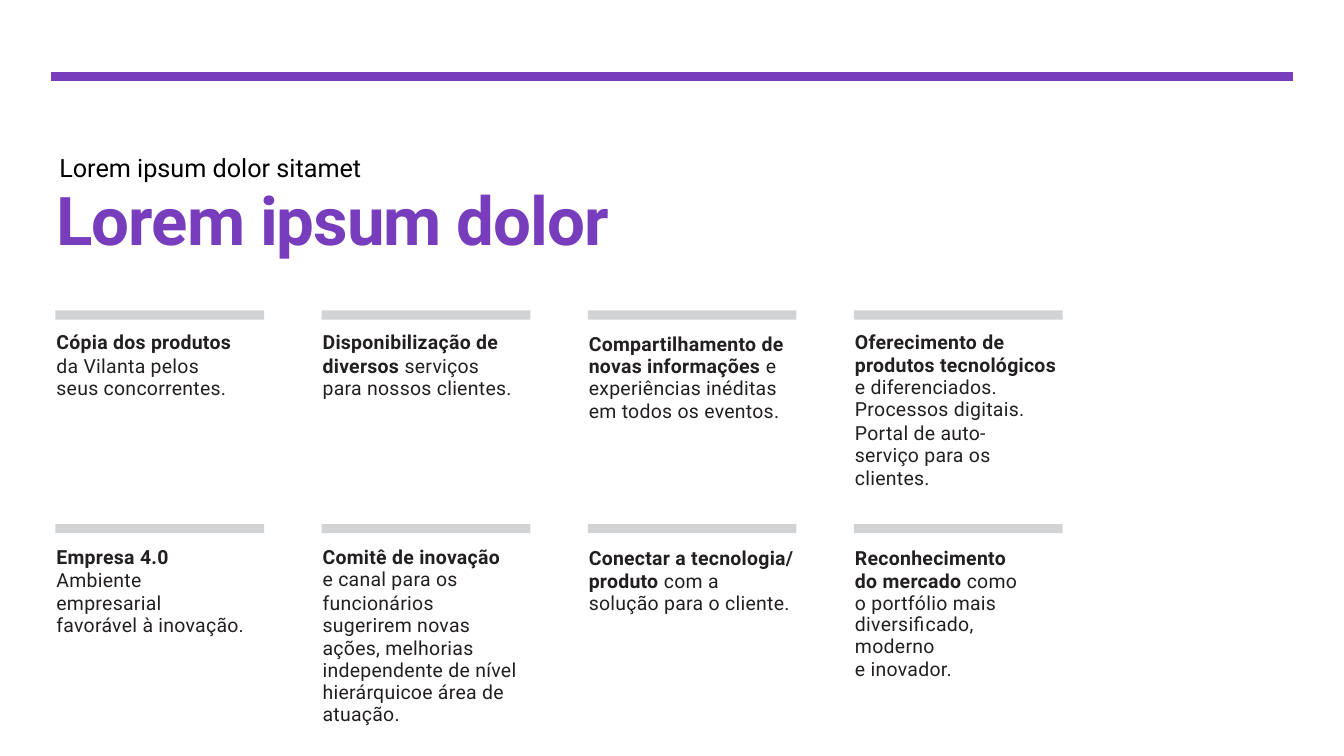
from dataclasses import dataclass

from lxml.etree import SubElement
from pptx import Presentation
from pptx.dml.color import RGBColor
from pptx.enum.shapes import MSO_CONNECTOR, MSO_SHAPE
from pptx.enum.text import MSO_ANCHOR, MSO_AUTO_SIZE
from pptx.oxml.ns import qn
from pptx.util import Inches, Pt

PURPLE, GRAY, INK, BLACK = "773DBD", "D1D3D4", "231F20", "000000"
FONT = "Roboto"
COLUMN_LEFT, COLUMN_STEP = 0.55, 2.64
BAR_TOPS = (3.08, 5.2)
BAR_WIDTH, BAR_HEIGHT = 2.07, 0.09
TEXT_OFFSETS = (0.18, 0.19)


@dataclass
class Para:
    bold: str = ""
    plain: str = ""
    line: float | None = 16
    before: float = 0
    right: float = 0
    size: float = 13.9
    color: str = INK
    tracking: float = 0.2


@dataclass
class Card:
    width: float
    height: float
    paras: list[Para]
    top_inset: float = 0.02


# Cards by row, left to right
CARDS = [
    [
        Card(1.94, 0.7, [
            Para("Cópia dos produtos", line=16.4),
            Para(plain="da Vilanta pelos seus concorrentes.", before=0.8, right=0.1)]),
        Card(1.97, 0.7, [
            Para("Disponibilização de", line=16.4),
            Para("diversos ", "serviços para nossos clientes.", before=0.8, right=0.03)]),
        Card(1.99, 0.92, [
            Para("Compartilhamento de novas informações ",
                 "e experiências inéditas em todos os eventos.")], 0.04),
        Card(2.03, 1.37, [
            Para("Oferecimento de", line=16.4),
            Para("produtos tecnológicos"),
            Para(plain="e diferenciados."),
            Para(plain="Processos digitais."),
            Para(plain="Portal de auto-serviço para os clientes.", before=0.8, right=0.3)]),
    ],
    [
        Card(1.94, 0.7, [
            Para("Empresa 4.0", line=16.4),
            Para(plain="Ambiente empresarial favorável à inovação.", before=0.8, right=0.03)]),
        Card(2.04, 1.59, [
            Para("Comitê de inovação", line=16.4),
            Para(plain="e canal para os"),
            Para(plain="funcionários sugerirem novas ações, melhorias independente "
                       "de nível hierárquicoe área de", before=0.8, right=0.05),
            Para(plain="atuação.", line=15.6)]),
        Card(2.07, 0.7, [
            Para("Conectar a tecnologia/ produto ", "com a\nsolução para o cliente.")], 0.04),
        Card(2.02, 1.13, [
            Para("Reconhecimento do mercado ", "como o portfólio mais", right=0.3),
            Para(plain="diversificado, moderno", line=15.2, right=0.3),
            Para(plain="e inovador.", line=16.4)], 0.04),
    ],
]


def rgb(color: str) -> RGBColor:
    return RGBColor.from_string(color)


def add_spans(para, text: str, bold: bool, tracking: float) -> None:
    for index, line in enumerate(text.split("\n")):
        if index:
            para.add_line_break()
        span = para.add_run()
        span.text = line
        span.font.bold = bold
        span._r.get_or_add_rPr().set("spc", str(round(tracking * 100)))


def add_text(page, left: float, top: float, width: float, height: float,
             paras: list[Para], insets: tuple[float, float, float, float],
             anchor=MSO_ANCHOR.TOP) -> None:
    box = page.shapes.add_textbox(Inches(left), Inches(top), Inches(width), Inches(height))
    frame = box.text_frame
    frame.word_wrap = True
    frame.auto_size = MSO_AUTO_SIZE.SHAPE_TO_FIT_TEXT
    frame.vertical_anchor = anchor
    (frame.margin_left, frame.margin_top,
     frame.margin_right, frame.margin_bottom) = map(Inches, insets)
    for index, item in enumerate(paras):
        para = frame.add_paragraph() if index else frame.paragraphs[0]
        if item.line:
            para.line_spacing = Pt(item.line)
        if item.before:
            para.space_before = Pt(item.before)
        if item.right:
            para._p.get_or_add_pPr().set("marR", str(Inches(item.right)))
        para.font.name = FONT
        para.font.size = Pt(item.size)
        para.font.color.rgb = rgb(item.color)
        for text, bold in ((item.bold, True), (item.plain, False)):
            if text:
                add_spans(para, text, bold, item.tracking)


def add_bar(page, left: float, top: float) -> None:
    bar = page.shapes.add_shape(MSO_SHAPE.RECTANGLE, Inches(left), Inches(top),
                                Inches(BAR_WIDTH), Inches(BAR_HEIGHT))
    bar.shadow.inherit = False
    bar.fill.solid()
    bar.fill.fore_color.rgb = rgb(GRAY)
    bar.line.fill.background()


def add_rule(page) -> None:
    rule = page.shapes.add_connector(MSO_CONNECTOR.STRAIGHT, Inches(12.82), Inches(0.76),
                                     Inches(0.51), Inches(0.76))
    rule.line.color.rgb = rgb(PURPLE)
    rule.line.width = Pt(6)
    SubElement(rule._element.spPr, qn("a:effectLst"))


def main() -> None:
    deck = Presentation()
    deck.slide_width, deck.slide_height = Inches(13.33), Inches(7.5)
    page = deck.slides.add_slide(deck.slide_layouts[6])

    # Header
    add_rule(page)
    add_text(page, 0.55, 1.75, 6.11, 0.82,
             [Para("Lorem ipsum dolor", line=None, size=48, color=PURPLE, tracking=-0.7)],
             (0.01, 0.02, 0, 0), MSO_ANCHOR.MIDDLE)
    add_text(page, 0.49, 1.46, 3.64, 0.4,
             [Para(plain="Lorem ipsum dolor sitamet", line=None, size=18,
                   color=BLACK, tracking=0)],
             (0.1, 0.05, 0.1, 0.05))

    # Card grid
    for bar_top, offset, row in zip(BAR_TOPS, TEXT_OFFSETS, CARDS):
        for column, card in enumerate(row):
            left = COLUMN_LEFT + column * COLUMN_STEP
            add_bar(page, left, bar_top)
            add_text(page, left, bar_top + offset, card.width, card.height,
                     card.paras, (0.01, card.top_inset, 0, 0))

    deck.save("out.pptx")


if __name__ == "__main__":
    main()
